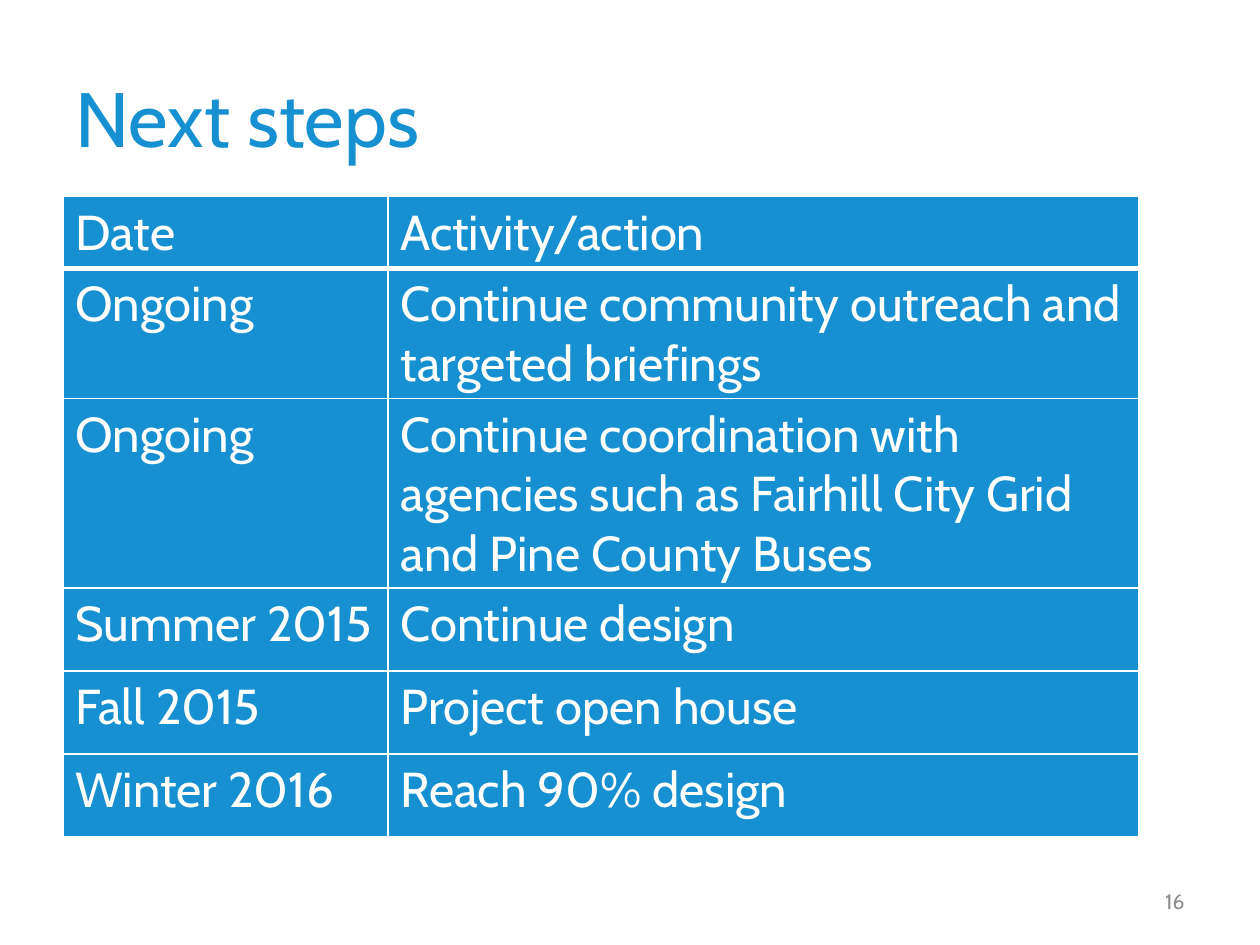
from pptx import Presentation
from pptx.dml.color import RGBColor as Rgb
from pptx.enum.text import MSO_ANCHOR as Anchor, PP_ALIGN as Align
from pptx.oxml.ns import qn
from pptx.util import Pt
from lxml.etree import SubElement as Sub

PX = 9144
FONT = "Cabin"
HUES = {"blue": "1690D0", "white": "FFFFFF", "gray": "8C8C8C"}
ROWS = [
    ("Date", "Activity/action"),
    ("Ongoing", "Continue community outreach and targeted briefings"),
    ("Ongoing", "Continue coordination with agencies such as "
                "Fairhill City Grid and Pine County Buses"),
    ("Summer 2015", "Continue design"),
    ("Fall 2015", "Project open house"),
    ("Winter 2016", "Reach 90% design"),
]


class Page:
    def __init__(self, deck):
        self.slide = deck.slides.add_slide(deck.slide_layouts[6])

    def style(self, frame, text, size, hue, align=Align.LEFT):
        frame.text = text
        for para in frame.paragraphs:
            para.alignment = align
            for run in para.runs:
                run.font.name = FONT
                run.font.size = Pt(size)
                run.font.color.rgb = Rgb.from_string(HUES[hue])

    def text(self, box, text, size, hue, align=Align.LEFT):
        shape = self.slide.shapes.add_textbox(*(n * PX for n in box))
        frame = shape.text_frame
        frame.word_wrap = True
        frame.vertical_anchor = Anchor.MIDDLE
        self.style(frame, text, size, hue, align)

    def edge(self, cell, side, width):
        props = cell._tc.get_or_add_tcPr()
        line = Sub(props, qn("a:ln" + side), w=str(Pt(width)))
        fill = Sub(line, qn("a:solidFill"))
        Sub(fill, qn("a:srgbClr"), val=HUES["white"])

    def table(self, left, top, cols, tall, rows):
        size = sum(cols) * PX, sum(tall) * PX
        grid = self.slide.shapes.add_table(
            len(rows), len(cols), left * PX, top * PX, *size).table
        for col, width in zip(grid.columns, cols):
            col.width = width * PX
        for r, (row, height) in enumerate(zip(rows, tall)):
            grid.rows[r].height = height * PX
            for c, text in enumerate(row):
                cell = grid.cell(r, c)
                for side in "LRTB":
                    self.edge(cell, side, 3 if r == 0 and side == "B" else 1)
                cell.fill.solid()
                cell.fill.fore_color.rgb = Rgb.from_string(HUES["blue"])
                self.style(cell.text_frame, text, 28, "white")


def main():
    deck = Presentation()
    deck.slide_width = 1000 * PX
    deck.slide_height = 750 * PX
    page = Page(deck)
    page.text((50, 30, 900, 125), "Next steps", 44, "blue")
    page.text((717, 695, 233, 40), "16", 12, "gray", Align.RIGHT)
    page.table(50, 156, [258, 596], [57] + [66] * 5, ROWS)
    deck.save("out.pptx")


if __name__ == "__main__":
    main()
